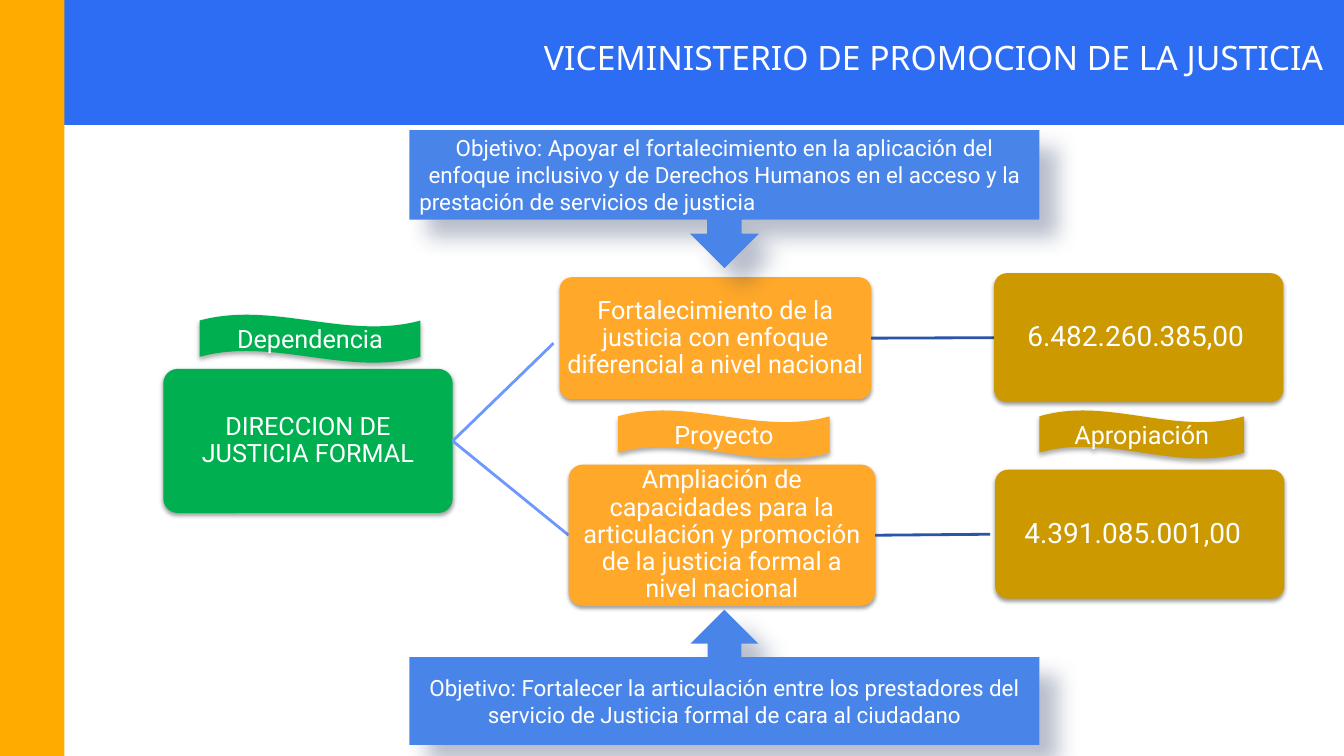
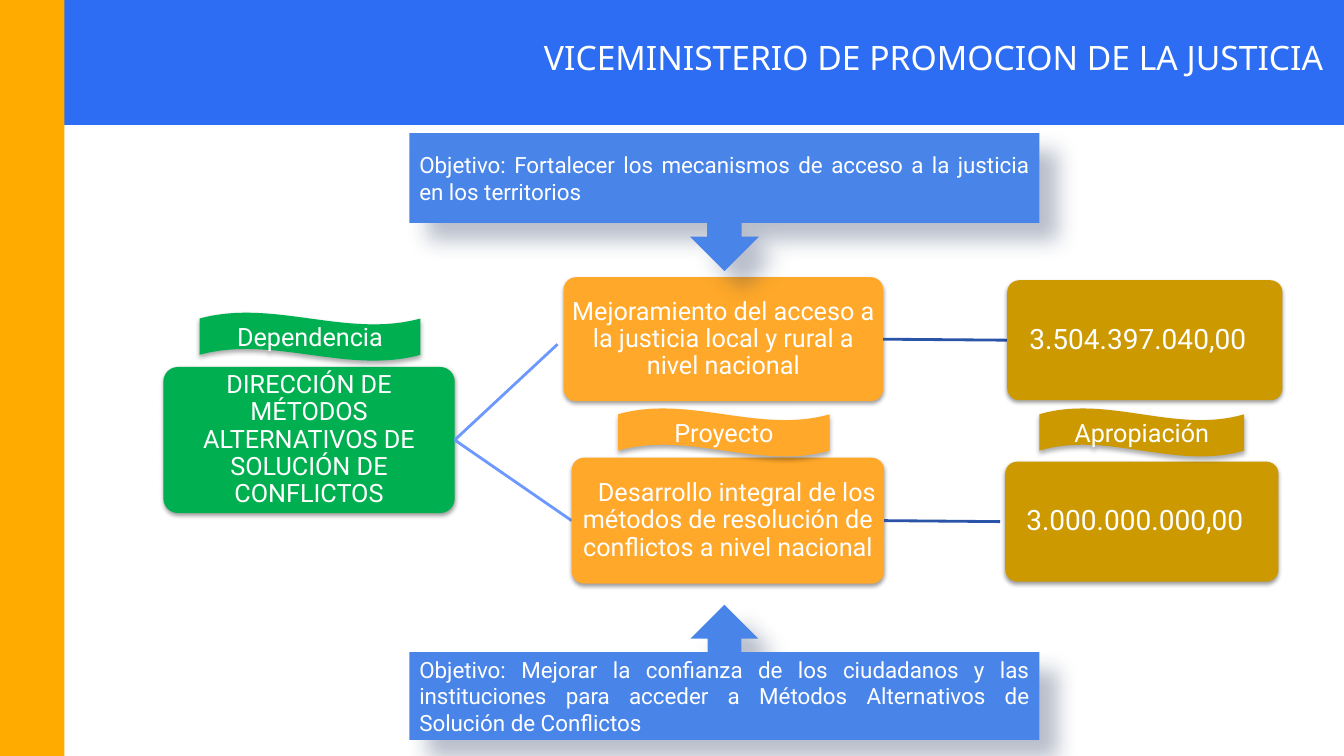
from dataclasses import dataclass

from lxml import etree
from pptx import Presentation
from pptx.dml.color import RGBColor
from pptx.enum import shapes, text
from pptx.oxml import ns
from pptx.util import Inches, Pt

SHAPE = shapes.MSO_SHAPE
ALIGN = text.PP_ALIGN


@dataclass(frozen=True)
class Theme:
    """Colours, fonts, type sizes and shadows."""
    band: str = "2D6DF3"
    stripe: str = "FFAB00"
    dependency: str = "00B050"
    project: str = "FFA829"
    amount: str = "CC9900"
    objective: str = "4985E9"
    branch: str = "6D98FF"
    link: str = "2A54A7"
    ink: str = "FFFFFF"
    title_font: str = "Noto Sans"
    body_font: str = "Roboto"
    title_size: int = 24
    amount_size: int = 20
    box_size: int = 18
    objective_size: int = 16
    box_shadow: tuple = ("000000", 38, 3.1, 1.6, 90)
    label_shadow: tuple = ("000000", 32, 3.5, 2.2, 90)
    objective_shadow: tuple = ("152A54", 30, 15, 18, 45)


THEME = Theme()
TITLE = "VICEMINISTERIO DE PROMOCION DE LA JUSTICIA"
LABELS = [
    ("Dependencia", 1.98, -0.95, 2.19, THEME.dependency),
    ("Proyecto", 6.13, 0, 2.10, THEME.project),
    ("Apropiación", 10.31, 0, 2.03, THEME.amount),
]
SLIDES = [
    {
        "label_top": 4.07,
        "dependency": ("DIRECCION DE JUSTICIA FORMAL", (1.62, 3.66, 2.87, 1.43)),
        "rows": [
            {"project": "Fortalecimiento de la justicia con enfoque diferencial a nivel nacional",
             "project_box": (5.55, 2.75, 3.09, 1.21),
             "amount": "6.482.260.385,00", "amount_box": (9.86, 2.71, 2.87, 1.28), "shift": 0.06},
            {"project": "Ampliación de capacidades para la articulación y promoción "
                        "de la justicia formal a nivel nacional",
             "project_box": (5.64, 4.61, 3.04, 1.40),
             "amount": "4.391.085.001,00", "amount_box": (9.87, 4.66, 2.87, 1.28), "shift": 0.14},
        ],
        "objectives": [
            (SHAPE.DOWN_ARROW_CALLOUT, 1.29, 1.37, [
                ("Objetivo: Apoyar el fortalecimiento en la aplicación del enfoque inclusivo "
                 "y de Derechos Humanos en el acceso y la", ALIGN.CENTER),
                ("prestación de servicios de justicia", ALIGN.LEFT)]),
            (SHAPE.UP_ARROW_CALLOUT, 6.05, 1.34, [
                ("Objetivo: Fortalecer la articulación entre los prestadores del servicio "
                 "de Justicia formal de cara al ciudadano", ALIGN.CENTER)]),
        ],
    },
    {
        "label_top": 4.05,
        "dependency": ("DIRECCIÓN DE MÉTODOS ALTERNATIVOS DE SOLUCIÓN DE CONFLICTOS",
                       (1.62, 3.64, 2.89, 1.45)),
        "rows": [
            {"project": "Mejoramiento del acceso a la justicia local y rural a nivel nacional",
             "project_box": (5.59, 2.75, 3.17, 1.23),
             "amount": "3.504.397.040,00", "amount_box": (9.99, 2.78, 2.73, 1.19), "shift": 0.14},
            {"project": "Desarrollo integral de los métodos de resolución de conflictos "
                        "a nivel nacional",
             "project_box": (5.67, 4.54, 3.10, 1.25), "indent": 0.18,
             "amount": "3.000.000.000,00", "amount_box": (9.97, 4.58, 2.71, 1.19), "shift": 0.14},
        ],
        "objectives": [
            (SHAPE.DOWN_ARROW_CALLOUT, 1.32, 1.37, [
                ("Objetivo: Fortalecer los mecanismos de acceso a la justicia "
                 "en los territorios", ALIGN.JUSTIFY)]),
            (SHAPE.UP_ARROW_CALLOUT, 6.00, 1.34, [
                ("Objetivo: Mejorar la confianza de los ciudadanos y las instituciones para "
                 "acceder a Métodos Alternativos de Solución de Conflictos", ALIGN.JUSTIFY)]),
        ],
    },
]


def write(shape, content, size=THEME.box_size, font=THEME.body_font, align=ALIGN.CENTER,
          spacing=None, insets=(0.1, 0.05, 0.1, 0.05), indent=0):
    """Fill a shape with a string or a list of (string, alignment) paragraphs."""
    frame = shape.text_frame
    frame.word_wrap = True
    frame.auto_size = text.MSO_AUTO_SIZE.NONE
    frame.vertical_anchor = text.MSO_ANCHOR.MIDDLE
    (frame.margin_left, frame.margin_top,
     frame.margin_right, frame.margin_bottom) = map(Inches, insets)
    lines = [(content, align)] if isinstance(content, str) else content
    for number, (line, alignment) in enumerate(lines):
        paragraph = frame.add_paragraph() if number else frame.paragraphs[0]
        paragraph.alignment = alignment
        if spacing:
            paragraph.line_spacing = spacing
        if indent:
            paragraph.runs or paragraph.add_run()
            paragraph.runs[0].text = line
            paragraph._p.get_or_add_pPr().set("indent", str(Inches(indent)))
        else:
            paragraph.text = line
        run_font = paragraph.runs[0].font
        run_font.name, run_font.size = font, Pt(size)
        run_font.color.rgb = RGBColor.from_string(THEME.ink)


def add_effects(properties, shadow=None):
    """Add an effect list, with an outer shadow if one is given."""
    effects = etree.SubElement(properties, ns.qn("a:effectLst"))
    if shadow:
        color, alpha, blur, distance, angle = shadow
        outer = etree.SubElement(
            effects, ns.qn("a:outerShdw"), blurRad=str(Pt(blur)), dist=str(Pt(distance)),
            dir=str(angle * 60000), algn="ctr", rotWithShape="0")
        tone = etree.SubElement(outer, ns.qn("a:srgbClr"), val=color)
        etree.SubElement(tone, ns.qn("a:alpha"), val=str(alpha * 1000))


def add_block(slide, kind, box, fill, shadow=None):
    """Add a filled preset shape without an outline."""
    shape = slide.shapes.add_shape(kind, *map(Inches, box))
    shape.fill.solid()
    shape.fill.fore_color.rgb = RGBColor.from_string(fill)
    shape.line.fill.background()
    add_effects(shape._element.spPr, shadow)
    return shape


def add_box(slide, box, fill, content, shift=0, **style):
    """Add a rounded box with centred text."""
    shape = add_block(slide, SHAPE.ROUNDED_RECTANGLE, box, fill, THEME.box_shadow)
    shape.adjustments[0] = 0.1
    write(shape, content, spacing=0.9, insets=(0.02, 0.01, 0.02 + shift, 0.01), **style)


def add_line(slide, start, end, color):
    """Join two points with a straight line."""
    connector = slide.shapes.add_connector(
        shapes.MSO_CONNECTOR.STRAIGHT, *map(Inches, start + end))
    connector.line.color.rgb = RGBColor.from_string(color)
    connector.line.width = Pt(2)
    add_effects(connector._element.spPr)


def left_middle(box):
    """Return the middle of the left side."""
    return box[0], box[1] + box[3] / 2


def right_middle(box):
    """Return the middle of the right side."""
    return box[0] + box[2], box[1] + box[3] / 2


def add_bands(slide, layout):
    """Draw the bands and move them behind everything on the layout."""
    bands = [((0, 0, 13.33, 1.24), THEME.band), ((0, 0, 0.64, 7.5), THEME.stripe)]
    for position, (box, fill) in enumerate(bands, start=2):
        band = add_block(slide, SHAPE.RECTANGLE, box, fill)
        layout.shapes.element.insert(position, band.element)


def add_tree(slide, content):
    """Draw the dependency, its projects and their amounts."""
    name, root = content["dependency"]
    add_box(slide, root, THEME.dependency, name)
    for row, (gap, drop, link_gap) in zip(content["rows"], [(0.06, 0.05, 0), (0, 0, 0.05)]):
        project, amount = row["project_box"], row["amount_box"]
        x, y = left_middle(project)
        add_line(slide, right_middle(root), (x - gap, y + drop), THEME.branch)
        add_box(slide, project, THEME.project, row["project"], indent=row.get("indent", 0))
        x, y = left_middle(amount)
        add_line(slide, right_middle(project), (x - link_gap, y), THEME.link)
        add_box(slide, amount, THEME.amount, row["amount"],
                shift=row["shift"], size=THEME.amount_size)


def add_slide(presentation, layout, content):
    """Build one slide with title, tree, objectives and labels."""
    slide = presentation.slides.add_slide(layout)
    title = slide.shapes.title
    title.left, title.top, title.width, title.height = map(Inches, (4.25, -0.02, 8.94, 1.23))
    write(title, TITLE, size=THEME.title_size, font=THEME.title_font, align=ALIGN.RIGHT,
          spacing=0.9, insets=(0.07, 0.04, 0.07, 0.04))
    add_tree(slide, content)
    for kind, top, height, lines in content["objectives"]:
        callout = add_block(slide, kind, (4.06, top, 6.25, height),
                            THEME.objective, THEME.objective_shadow)
        write(callout, lines, size=THEME.objective_size)
    for label, left, offset, width, fill in LABELS:
        box = (left, content["label_top"] + offset, width, 0.48)
        write(add_block(slide, SHAPE.WAVE, box, fill, THEME.label_shadow), label)
    return slide


def main():
    """Build and save the presentation."""
    presentation = Presentation()
    presentation.slide_width, presentation.slide_height = Inches(13.33), Inches(7.5)
    layout = presentation.slide_layouts[5]
    built = [add_slide(presentation, layout, content) for content in SLIDES]
    add_bands(built[0], layout)
    presentation.save("out.pptx")


if __name__ == "__main__":
    main()
